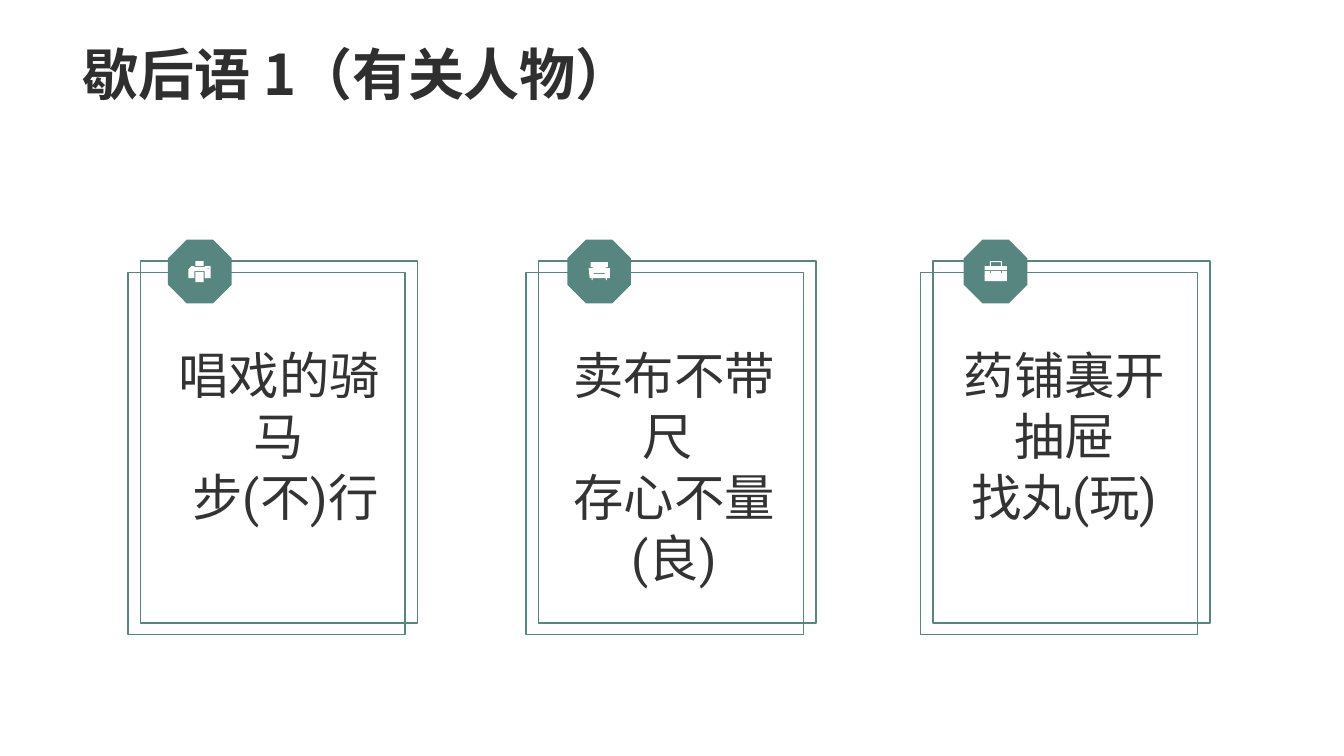
"""Build a slide of three framed cards with Chinese two-part sayings."""
import dataclasses

import pptx
import pptx.dml.color
import pptx.enum.lang
import pptx.enum.shapes
import pptx.enum.text
import pptx.oxml
import pptx.oxml.ns
import pptx.util

Pt = pptx.util.Pt
SHAPE = pptx.enum.shapes.MSO_SHAPE
ALIGN = pptx.enum.text.PP_ALIGN
TEAL, WHITE, INK, GREY = "56867F", "FFFFFF", "2F2F2F", "333333"
Loop = list[tuple[int, int]]


@dataclasses.dataclass
class Card:
    left: float
    badge: float
    icon: float
    text: float
    rise: float
    tall: float
    loops: list[Loop]
    lines: tuple[str, str]


def box(x: int, y: int, w: int, h: int) -> Loop:
    return [(x, y), (x + w, y), (x + w, y + h), (x, y + h)]


def hue(code: str):
    return pptx.dml.color.RGBColor.from_string(code)


def paint(shape, fill: str | None, line: str | None) -> None:
    shape.shadow.inherit = False
    if fill:
        shape.fill.solid()
        shape.fill.fore_color.rgb = hue(fill)
    else:
        shape.fill.background()
    if line:
        shape.line.color.rgb = hue(line)
        shape.line.width = Pt(1)
    else:
        shape.line.fill.background()


def write(para, text: str, face: str, size: float, code: str, bold: bool) -> None:
    run = para.add_run()
    run.text = text
    font = run.font
    font.name, font.size, font.bold = face, Pt(size), bold
    font.color.rgb = hue(code)
    font.language_id = pptx.enum.lang.MSO_LANGUAGE_ID.SIMPLIFIED_CHINESE
    east = pptx.oxml.parse_xml(
        f'<a:ea {pptx.oxml.ns.nsdecls("a")} typeface="{face}"/>')
    run._r.rPr.find(pptx.oxml.ns.qn("a:latin")).addnext(east)


def head(slide, text: str) -> None:
    title = slide.shapes.title
    title.left, title.top = Pt(51.8), Pt(0)
    title.width, title.height = Pt(855.4), Pt(80.6)
    frame = title.text_frame
    frame.vertical_anchor = pptx.enum.text.MSO_ANCHOR.BOTTOM
    frame.auto_size = pptx.enum.text.MSO_AUTO_SIZE.NONE
    para = frame.paragraphs[0]
    para.alignment = ALIGN.LEFT
    para.line_spacing = 0.9
    write(para, text, "Noto Sans CJK SC", 40, INK, True)


def draw(shapes, card: Card) -> None:
    for dx, top in ((0, 194.8), (9, 186.5)):
        frame = shapes.add_shape(SHAPE.RECTANGLE, Pt(card.left + dx), Pt(top),
                                 Pt(198), Pt(258.5))
        paint(frame, None, TEAL)
    badge = shapes.add_shape(SHAPE.OCTAGON, Pt(card.badge), Pt(171.2),
                             Pt(45.5), Pt(45.5))
    paint(badge, TEAL, None)
    first, *rest = card.loops
    pen = shapes.build_freeform(*first[0], scale=Pt(0.72))
    pen.add_line_segments(first[1:], close=True)
    for loop in rest:
        pen.move_to(*loop[0])
        pen.add_line_segments(loop[1:], close=True)
    paint(pen.convert_to_shape(Pt(card.icon), Pt(card.rise)), WHITE, None)


def fill(shapes, card: Card) -> None:
    label = shapes.add_textbox(Pt(card.text), Pt(241.9), Pt(162.7), Pt(card.tall))
    frame = label.text_frame
    frame.word_wrap = True
    frame.auto_size = pptx.enum.text.MSO_AUTO_SIZE.SHAPE_TO_FIT_TEXT
    for rank, line in enumerate(card.lines):
        para = frame.add_paragraph() if rank else frame.paragraphs[0]
        para.alignment = ALIGN.CENTER
        para.line_spacing = Pt(43.5)
        write(para, line, "Roboto", 36, GREY, False)


PRINT = [
    box(7, 11, 8, 10),
    [(6, 5), (6, 6), (16, 6), (16, 5), (22, 5), (22, 17), (16, 17), (16, 10),
     (6, 10), (6, 17), (0, 17), (0, 8), (3, 5)],
    box(19, 7, 1, 1),
    box(7, 0, 8, 5),
]
SOFA = [
    [(4, 6), (5, 12), (16, 12), (17, 6), (21, 6), (21, 16), (18, 16), (18, 18),
     (17, 18), (17, 16), (4, 16), (4, 18), (3, 18), (3, 16), (1, 16), (0, 6)],
    [(19, 0), (19, 5), (17, 5), (16, 11), (5, 11), (4, 5), (2, 5), (2, 0)],
]
CASE = [
    [(5, 10), (5, 12), (6, 12), (6, 10), (16, 10), (16, 12), (17, 12), (17, 10),
     (22, 10), (22, 20), (0, 20), (0, 10)],
    [(17, 0), (17, 5), (22, 5), (22, 9), (0, 9), (0, 5), (5, 5), (5, 0)],
    box(6, 1, 10, 4),
]
CARDS = [
    Card(91.4, 120, 134.6, 118.1, 186.5, 181.4, PRINT,
         ("唱戏的骑马", " 步(不)行")),
    Card(375.8, 405.2, 420.5, 400.3, 187.2, 181.4, SOFA,
         ("卖布不带尺 ", "存心不量(良)")),
    Card(657.4, 688.4, 703.4, 679, 186.5, 138.2, CASE,
         ("药铺裏开抽屉", "找丸(玩)")),
]


def main() -> None:
    deck = pptx.Presentation()
    deck.slide_width, deck.slide_height = Pt(960), Pt(540)
    slide = deck.slides.add_slide(deck.slide_layouts[5])
    head(slide, "歇后语 1（有关人物）")
    for card in CARDS:
        draw(slide.shapes, card)
        fill(slide.shapes, card)
    deck.save("out.pptx")


if __name__ == "__main__":
    main()
